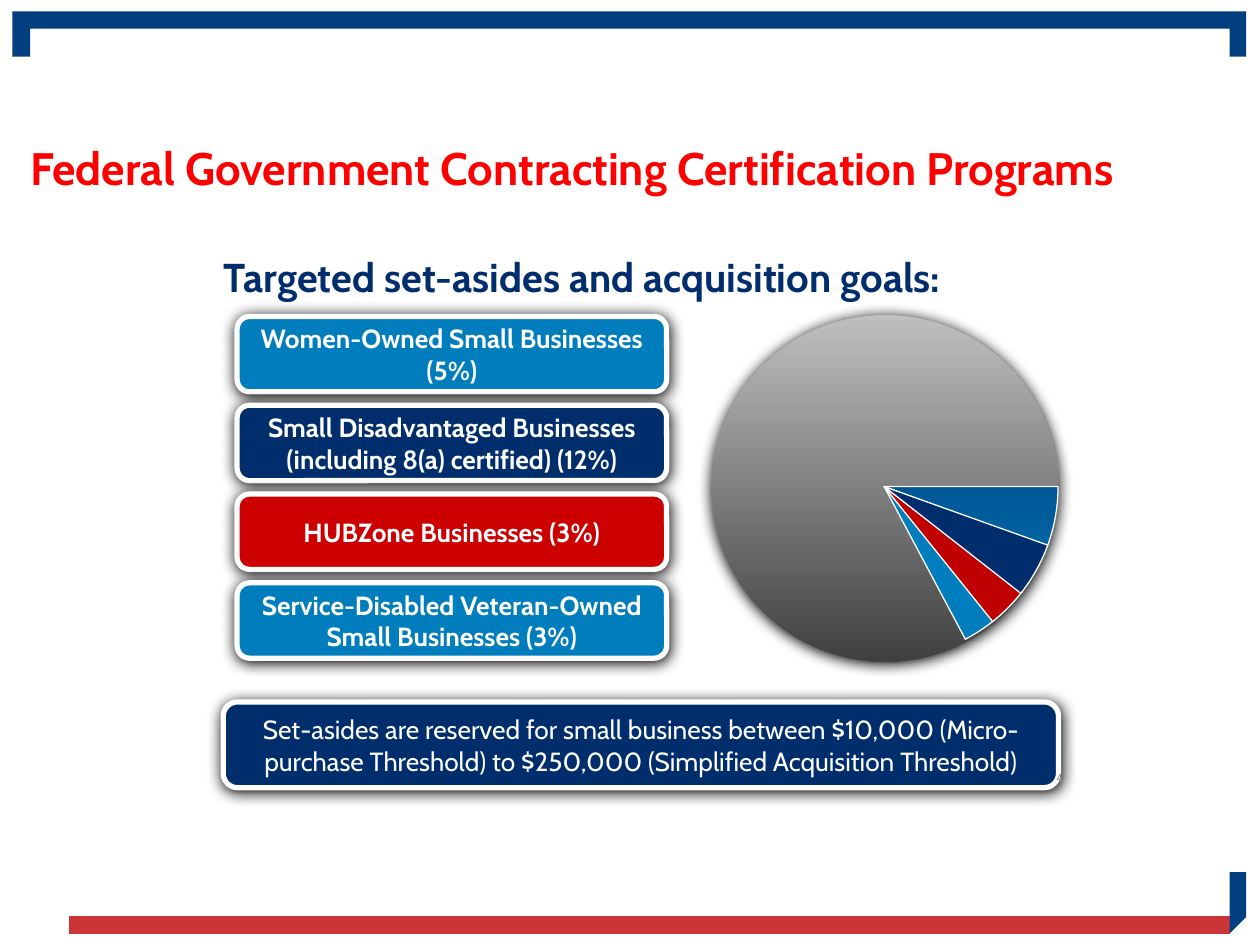
from lxml import etree
from pptx import Presentation
from pptx.dml.color import RGBColor
from pptx.enum.shapes import MSO_SHAPE
from pptx.enum.text import MSO_ANCHOR, PP_ALIGN
from pptx.oxml.ns import qn
from pptx.util import Cm, Pt

ROUNDED = MSO_SHAPE.ROUNDED_RECTANGLE
ELLIPSE = MSO_SHAPE.OVAL
PIE = MSO_SHAPE.PIE
TOP, MIDDLE = MSO_ANCHOR.TOP, MSO_ANCHOR.MIDDLE
LEFT, CENTER, RIGHT = PP_ALIGN.LEFT, PP_ALIGN.CENTER, PP_ALIGN.RIGHT

FONT = "Cabin"
WHITE = RGBColor(0xFF, 0xFF, 0xFF)
NAVY = RGBColor(0x00, 0x2E, 0x6D)
HEADING_NAVY = RGBColor(0x00, 0x2D, 0x6C)
BLUE = RGBColor(0x00, 0x7D, 0xBC)
RED = RGBColor(0xCC, 0x00, 0x00)
SLICE_RED = RGBColor(0xC0, 0x00, 0x00)
TITLE_RED = RGBColor(0xFF, 0x00, 0x00)
FRAME_BLUE = RGBColor(0x00, 0x3E, 0x80)
FRAME_RED = RGBColor(0xCC, 0x35, 0x38)
LIGHT_GRAY = RGBColor(0xBF, 0xBF, 0xBF)
DARK_GRAY = RGBColor(0x40, 0x40, 0x40)
NUMBER_GRAY = RGBColor(0x8C, 0x8C, 0x8C)

PROGRAMS = [
    ("Women-Owned Small Businesses (5%)", BLUE),
    ("Small Disadvantaged Businesses (including 8(a) certified) (12%)", NAVY),
    ("HUBZone Businesses (3%)", RED),
    ("Service-Disabled Veteran-Owned Small Businesses (3%)", BLUE),
]

# Start and end angle in degrees, clockwise from the right, then fill colours
SLICES = [
    (49.9, 62, [BLUE]),
    (37.5, 51.2, [SLICE_RED]),
    (0, 20.1, [NAVY, BLUE]),
    (19.7, 38, [NAVY]),
]

# Outlines of the slide frame in centimetres
FRAME = [
    (FRAME_BLUE, [
        [(0.25, 0.23), (24.79, 0.23), (24.79, 0.58), (0.61, 0.58),
         (0.61, 1.14), (0.25, 1.14)],
        [(24.79, 0.23), (25.12, 0.23), (25.12, 1.14), (24.79, 1.14)],
    ]),
    (FRAME_RED, [
        [(1.4, 18.47), (24.79, 18.47), (24.79, 18.82), (1.4, 18.82)],
    ]),
    (FRAME_BLUE, [
        [(24.79, 17.58), (25.12, 17.58), (25.12, 18.49), (24.79, 18.82)],
    ]),
]


def paint(shape, colors, line_width=None):
    """Fill with one colour or a top-down gradient, with an optional white line."""
    shape.shadow.inherit = False
    if len(colors) == 1:
        shape.fill.solid()
        shape.fill.fore_color.rgb = colors[0]
    else:
        shape.fill.gradient()
        shape.fill.gradient_angle = 270
        for stop, color in zip(shape.fill.gradient_stops, colors):
            stop.color.rgb = color
    if line_width is None:
        shape.line.fill.background()
    else:
        shape.line.color.rgb = WHITE
        shape.line.width = Pt(line_width)


def add_soft_shadow(shape):
    effects = shape._element.spPr.find(qn("a:effectLst"))
    shadow = etree.SubElement(
        effects, qn("a:outerShdw"), blurRad=str(Pt(8.5)), dist=str(Pt(1)),
        dir="5400000", algn="ctr", rotWithShape="0")
    etree.SubElement(shadow, qn("a:srgbClr"), val="000000")


def write(shape, text, size, color, bold=False, align=LEFT, anchor=TOP):
    frame = shape.text_frame
    frame.word_wrap = True
    frame.vertical_anchor = anchor
    paragraph = frame.paragraphs[0]
    paragraph.alignment = align
    run = paragraph.add_run()
    run.text = text
    run.font.name = FONT
    run.font.size = Pt(size)
    run.font.bold = bold
    run.font.color.rgb = color


def add_label(slide, box, text, size, color, margins=(0, 0), **style):
    shape = slide.shapes.add_textbox(*map(Cm, box))
    frame = shape.text_frame
    frame.margin_left = frame.margin_right = Cm(margins[0])
    frame.margin_top = frame.margin_bottom = Cm(margins[1])
    write(shape, text, size, color, **style)


def add_panel(slide, box, text, color, bold):
    shape = slide.shapes.add_shape(ROUNDED, *map(Cm, box))
    paint(shape, [color], 3)
    add_soft_shadow(shape)
    write(shape, text, 15, WHITE, bold, CENTER, MIDDLE)


def add_slice(slide, start, end, colors):
    shape = slide.shapes.add_shape(PIE, Cm(14.32), Cm(6.33), Cm(7.01), Cm(6.96))
    # Angles are stored as 60000ths of a degree, adjustments as 100000ths
    shape.adjustments[0] = start * 0.6
    shape.adjustments[1] = end * 0.6
    paint(shape, colors, 0.75)


def add_outline(slide, color, contours):
    points = [[(Cm(x), Cm(y)) for x, y in contour] for contour in contours]
    builder = slide.shapes.build_freeform(*points[0][0])
    builder.add_line_segments(points[0][1:], close=True)
    for contour in points[1:]:
        builder.move_to(*contour[0])
        builder.add_line_segments(contour[1:], close=True)
    paint(builder.convert_to_shape(), [color])


def main():
    presentation = Presentation()
    presentation.slide_width = Cm(25.4)
    presentation.slide_height = Cm(19.05)
    slide = presentation.slides.add_slide(presentation.slide_layouts[6])

    # Frame
    for color, contours in FRAME:
        add_outline(slide, color, contours)

    # Headings
    add_label(slide, (0.61, 2.82, 24.2, 1.24),
              "Federal Government Contracting Certification Programs",
              26, TITLE_RED, bold=True)
    add_label(slide, (4.5, 5.08, 16.43, 0.99),
              "Targeted set-asides and acquisition goals:",
              23, HEADING_NAVY, bold=True)

    # Programs and threshold note
    for index, (text, color) in enumerate(PROGRAMS):
        add_panel(slide, (4.78, 6.38 + 1.79 * index, 8.66, 1.52),
                  text, color, True)
    add_panel(slide, (4.5, 14.15, 16.84, 1.73),
              "Set-asides are reserved for small business between $10,000 "
              "(Micro- purchase Threshold) to $250,000 "
              "(Simplified Acquisition Threshold)", NAVY, False)

    # Pie of acquisition goals
    disc = slide.shapes.add_shape(ELLIPSE, Cm(14.35), Cm(6.35), Cm(6.99), Cm(6.99))
    paint(disc, [LIGHT_GRAY, DARK_GRAY])
    add_soft_shadow(disc)
    for start, end, colors in SLICES:
        add_slice(slide, start, end, colors)

    # Slide number
    add_label(slide, (17.32, 15.29, 4.29, 0.76), "4", 6.8, NUMBER_GRAY,
              margins=(0.18, 0.1), align=RIGHT, anchor=MIDDLE)

    presentation.save("out.pptx")


if __name__ == "__main__":
    main()
